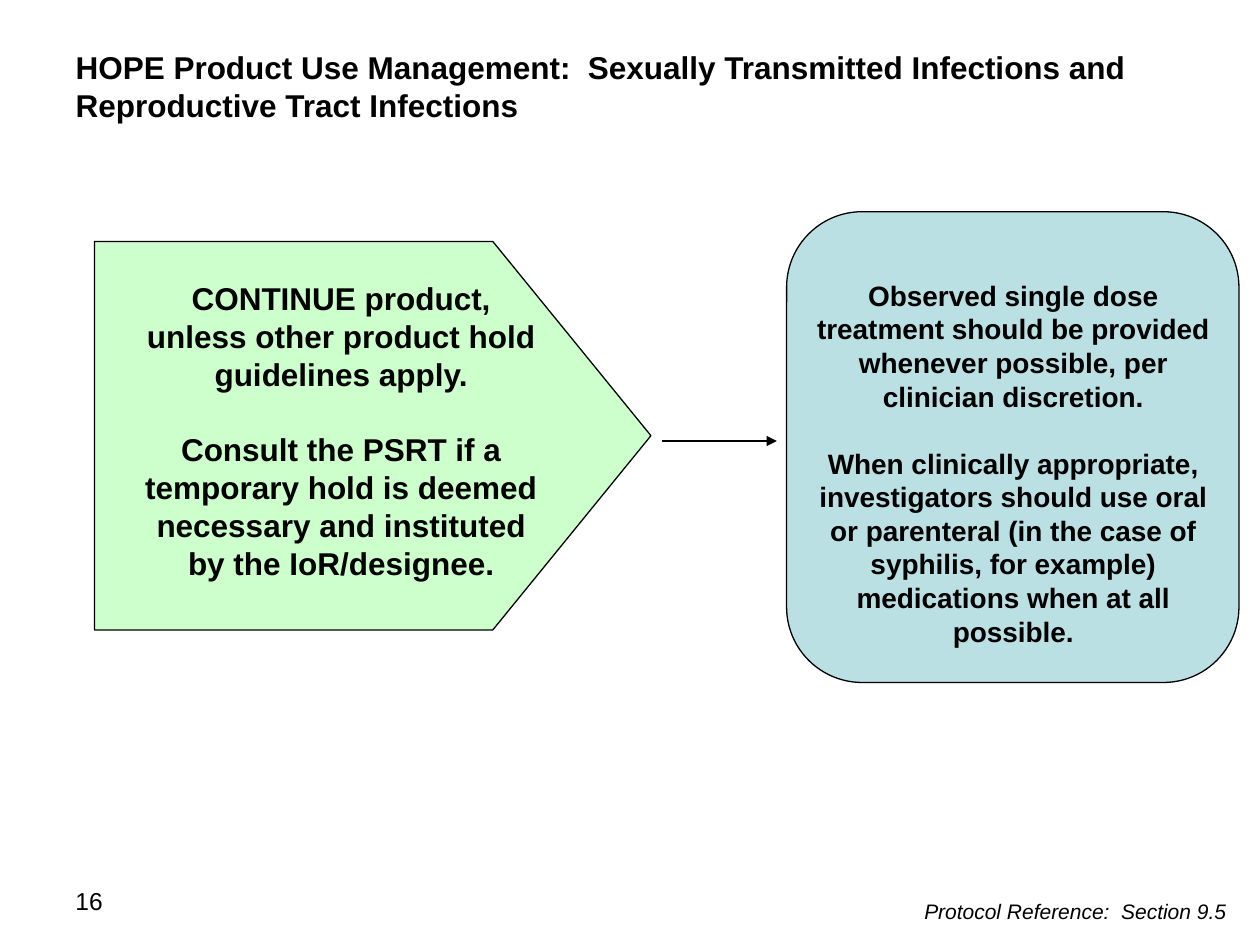
from lxml import etree
from pptx import Presentation
from pptx.dml.color import RGBColor
from pptx.enum.shapes import MSO_CONNECTOR, MSO_SHAPE
from pptx.enum.text import MSO_ANCHOR, MSO_AUTO_SIZE, PP_ALIGN
from pptx.oxml.ns import qn
from pptx.util import Pt

BLACK = RGBColor(0x00, 0x00, 0x00)
GREEN = RGBColor(0xCC, 0xFF, 0xCC)
BLUE = RGBColor(0xBB, 0xE0, 0xE3)
LEFT, CENTER, RIGHT = PP_ALIGN.LEFT, PP_ALIGN.CENTER, PP_ALIGN.RIGHT
TOP = MSO_ANCHOR.TOP
NO_AUTOFIT = MSO_AUTO_SIZE.NONE
PENTAGON, ROUNDED = MSO_SHAPE.PENTAGON, MSO_SHAPE.ROUNDED_RECTANGLE
STRAIGHT = MSO_CONNECTOR.STRAIGHT
TITLE_ONLY = 5


def place(shape, left, top, width, height):
    """Set the position and size of a shape in points."""
    shape.left, shape.top = Pt(left), Pt(top)
    shape.width, shape.height = Pt(width), Pt(height)


def write_text(shape, *texts, size, bold=False, italic=False, align=LEFT, gap=0):
    """Fill a shape with paragraphs, separated by a gap in points."""
    frame = shape.text_frame
    frame.word_wrap = True
    frame.auto_size = NO_AUTOFIT
    frame.vertical_anchor = TOP
    for index, text in enumerate(texts):
        paragraph = frame.add_paragraph() if index else frame.paragraphs[0]
        paragraph.alignment = align
        paragraph.line_spacing = 1.0
        paragraph.space_before = Pt(gap if index else 0)
        run = paragraph.add_run()
        run.text = text
        font = run.font
        font.name, font.size = "Arial", Pt(size)
        font.bold, font.italic = bold, italic
        font.color.rgb = BLACK


def add_text(slide, box, *texts, **text_format):
    """Add a text box with formatted paragraphs."""
    shape = slide.shapes.add_textbox(*map(Pt, box))
    write_text(shape, *texts, **text_format)


def add_panel(slide, kind, box, fill, adjustment):
    """Add a filled and outlined preset shape."""
    shape = slide.shapes.add_shape(kind, *map(Pt, box))
    shape.shadow.inherit = False
    shape.adjustments[0] = adjustment
    shape.fill.solid()
    shape.fill.fore_color.rgb = fill
    shape.line.color.rgb = BLACK
    shape.line.width = Pt(0.75)


def add_arrow(slide, start, end, y):
    """Add a horizontal arrow that points to its end."""
    arrow = slide.shapes.add_connector(STRAIGHT, Pt(start), Pt(y), Pt(end), Pt(y))
    arrow.line.color.rgb = BLACK
    arrow.line.width = Pt(0.75)
    etree.SubElement(arrow.line._get_or_add_ln(), qn("a:tailEnd"), type="triangle")
    etree.SubElement(arrow._element.spPr, qn("a:effectLst"))


def main():
    """Build the slide and save it."""
    presentation = Presentation()
    presentation.slide_width, presentation.slide_height = Pt(720), Pt(540)
    slide = presentation.slides.add_slide(presentation.slide_layouts[TITLE_ONLY])

    place(slide.shapes.title, 36, 24, 648, 51)
    write_text(
        slide.shapes.title,
        "HOPE Product Use Management:  Sexually Transmitted Infections and "
        "Reproductive Tract Infections",
        size=18, bold=True,
    )
    add_text(slide, (36, 502.5, 168, 37.5), "16", size=14)

    add_panel(slide, PENTAGON, (54, 138, 318, 222), GREEN, 0.407)
    add_text(
        slide, (72, 156, 246, 181.5),
        "CONTINUE product, unless other product hold guidelines apply.",
        "Consult the PSRT if a temporary hold is deemed necessary and "
        "instituted by the IoR/designee.",
        size=18, bold=True, align=CENTER, gap=21.6,
    )
    add_arrow(slide, 378, 444, 252)
    add_panel(slide, ROUNDED, (449.5, 121, 258.5, 269), BLUE, 0.167)
    add_text(
        slide, (457.5, 155.5, 243, 220.5),
        "Observed single dose treatment should be provided whenever possible, "
        "per clinician discretion.",
        "When clinically appropriate, investigators should use oral or parenteral "
        "(in the case of syphilis, for example) medications when at all possible.",
        size=16, bold=True, align=CENTER, gap=19.2,
    )
    add_text(
        slide, (438, 510, 270, 21.5), "Protocol Reference:  Section 9.5",
        size=12, italic=True, align=RIGHT,
    )
    presentation.save("out.pptx")


if __name__ == "__main__":
    main()
